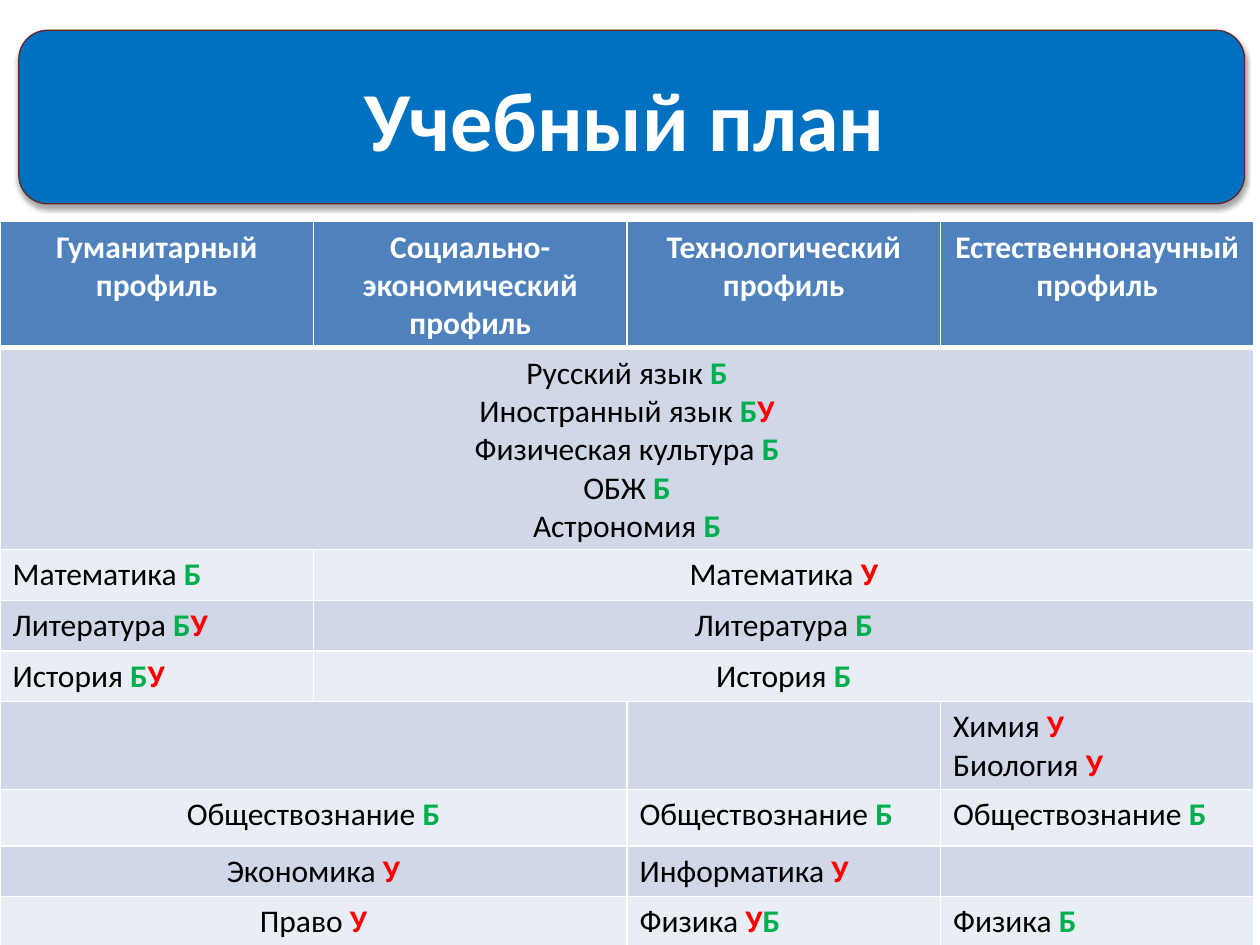
from pptx import Presentation
from pptx.dml.color import RGBColor
from pptx.enum.shapes import MSO_SHAPE as Shape
from pptx.enum.text import MSO_ANCHOR as Anchor, MSO_AUTO_SIZE as AutoSize, PP_ALIGN as Align
from pptx.oxml import parse_xml
from pptx.oxml.ns import nsdecls
from pptx.util import Cm, Pt

WHITE = RGBColor(0xFF, 0xFF, 0xFF)
BLACK = RGBColor(0, 0, 0)
BANNER_BLUE = RGBColor(0x00, 0x70, 0xC0)
BANNER_EDGE = RGBColor(0x63, 0x25, 0x23)
HEADER_BLUE = RGBColor(0x4F, 0x81, 0xBD)
BANDS = [RGBColor(0xD0, 0xD8, 0xE8), RGBColor(0xE9, 0xED, 0xF4)]
LEVEL_COLORS = {"Б": RGBColor(0x00, 0xB0, 0x50), "У": RGBColor(0xFF, 0, 0)}

FONT = "Calibri"
COLUMN_WIDTH = 6.32
ROW_HEIGHTS = [1.6, 1.6, 1.03, 1, 1, 1.6, 1.14, 1, 0.8]
PROFILES = [
    "Гуманитарный профиль",
    "Социально-экономический профиль",
    "Технологический профиль",
    "Естественнонаучный профиль",
]
COMMON = ["Русский язык Б", "Иностранный язык БУ", "Физическая культура Б", "ОБЖ Б", "Астрономия Б"]
PLAN = [
    [(4, COMMON)],
    [(1, ["Математика Б"]), (3, ["Математика У"])],
    [(1, ["Литература БУ"]), (3, ["Литература Б"])],
    [(1, ["История БУ"]), (3, ["История Б"])],
    [(2, []), (1, []), (1, ["Химия У", "Биология У"])],
    [(2, ["Обществознание Б"]), (1, ["Обществознание Б"]), (1, ["Обществознание Б"])],
    [(2, ["Экономика У"]), (1, ["Информатика У"]), (1, [])],
    [(2, ["Право У"]), (1, ["Физика УБ"]), (1, ["Физика Б"])],
]


def format_span(span, size, color, bold):
    span.font.name = FONT
    span.font.size = Pt(size)
    span.font.bold = bold
    span.font.color.rgb = color


def add_banner(page):
    banner = page.shapes.add_shape(Shape.ROUNDED_RECTANGLE, Cm(0.38), Cm(0.61), Cm(24.71), Cm(3.5))
    banner.fill.solid()
    banner.fill.fore_color.rgb = BANNER_BLUE
    banner.line.color.rgb = BANNER_EDGE
    banner.line.width = Pt(0.75)
    banner.shadow.inherit = False
    effects = banner.element.spPr.find(".//{*}effectLst")
    effects.append(parse_xml(
        f'<a:outerShdw {nsdecls("a")} blurRad="{Pt(3.1)}" dist="{Pt(1.8)}" dir="5400000" rotWithShape="0">'
        '<a:srgbClr val="000000"><a:alpha val="35000"/></a:srgbClr></a:outerShdw>'
    ))


def place_title(page, text):
    title = page.shapes.title
    title.left, title.top, title.width, title.height = Cm(1.09), Cm(1.22), Cm(23.01), Cm(2.31)
    frame = title.text_frame
    frame.text = text
    frame.word_wrap = True
    frame.auto_size = AutoSize.SHAPE_TO_FIT_TEXT
    frame.vertical_anchor = Anchor.MIDDLE
    para = frame.paragraphs[0]
    para.alignment = Align.CENTER
    format_span(para.runs[0], 48, WHITE, True)
    page.shapes.element.append(title.element)


def set_borders(cell, top, bottom):
    properties = cell._tc.get_or_add_tcPr()
    widths = {"lnL": 1, "lnR": 1, "lnT": top, "lnB": bottom}
    for index, (side, width) in enumerate(widths.items()):
        properties.insert(index, parse_xml(
            f'<a:{side} {nsdecls("a")} w="{Pt(width)}"><a:solidFill>'
            f'<a:srgbClr val="{WHITE}"/></a:solidFill></a:{side}>'
        ))


def style_cell(cell, fill, top=1, bottom=1):
    cell.fill.solid()
    cell.fill.fore_color.rgb = fill
    set_borders(cell, top, bottom)


def write_profile(cell, name):
    cell.text_frame.text = name
    para = cell.text_frame.paragraphs[0]
    para.alignment = Align.CENTER
    format_span(para.runs[0], 18, WHITE, True)


def write_subjects(cell, subjects, alignment):
    frame = cell.text_frame
    for index, subject in enumerate(subjects):
        para = frame.add_paragraph() if index else frame.paragraphs[0]
        para.alignment = alignment
        name, space, levels = subject.rpartition(" ")
        para.text = name + space
        format_span(para.runs[0], 18, BLACK, False)
        for level in levels:
            span = para.add_run()
            span.text = level
            format_span(span, 18, LEVEL_COLORS[level], True)


def add_plan(page):
    columns = len(PROFILES)
    table = page.shapes.add_table(
        len(ROW_HEIGHTS), columns, Cm(0), Cm(4.47), Cm(COLUMN_WIDTH * columns), Cm(sum(ROW_HEIGHTS))
    ).table
    for column in table.columns:
        column.width = Cm(COLUMN_WIDTH)
    for row, height in zip(table.rows, ROW_HEIGHTS):
        row.height = Cm(height)
    for column, name in enumerate(PROFILES):
        cell = table.cell(0, column)
        style_cell(cell, HEADER_BLUE, bottom=3)
        write_profile(cell, name)
    for row, entries in enumerate(PLAN, start=1):
        for column in range(columns):
            style_cell(table.cell(row, column), BANDS[(row - 1) % 2], top=3 if row == 1 else 1)
        column = 0
        for span_width, subjects in entries:
            cell = table.cell(row, column)
            if span_width > 1:
                cell.merge(table.cell(row, column + span_width - 1))
            write_subjects(cell, subjects, Align.CENTER if span_width > 1 else Align.LEFT)
            column += span_width


def main():
    deck = Presentation()
    deck.slide_width, deck.slide_height = Cm(25.4), Cm(19.05)
    page = deck.slides.add_slide(deck.slide_layouts[5])
    add_banner(page)
    place_title(page, "Учебный план")
    add_plan(page)
    deck.save("out.pptx")


if __name__ == "__main__":
    main()
